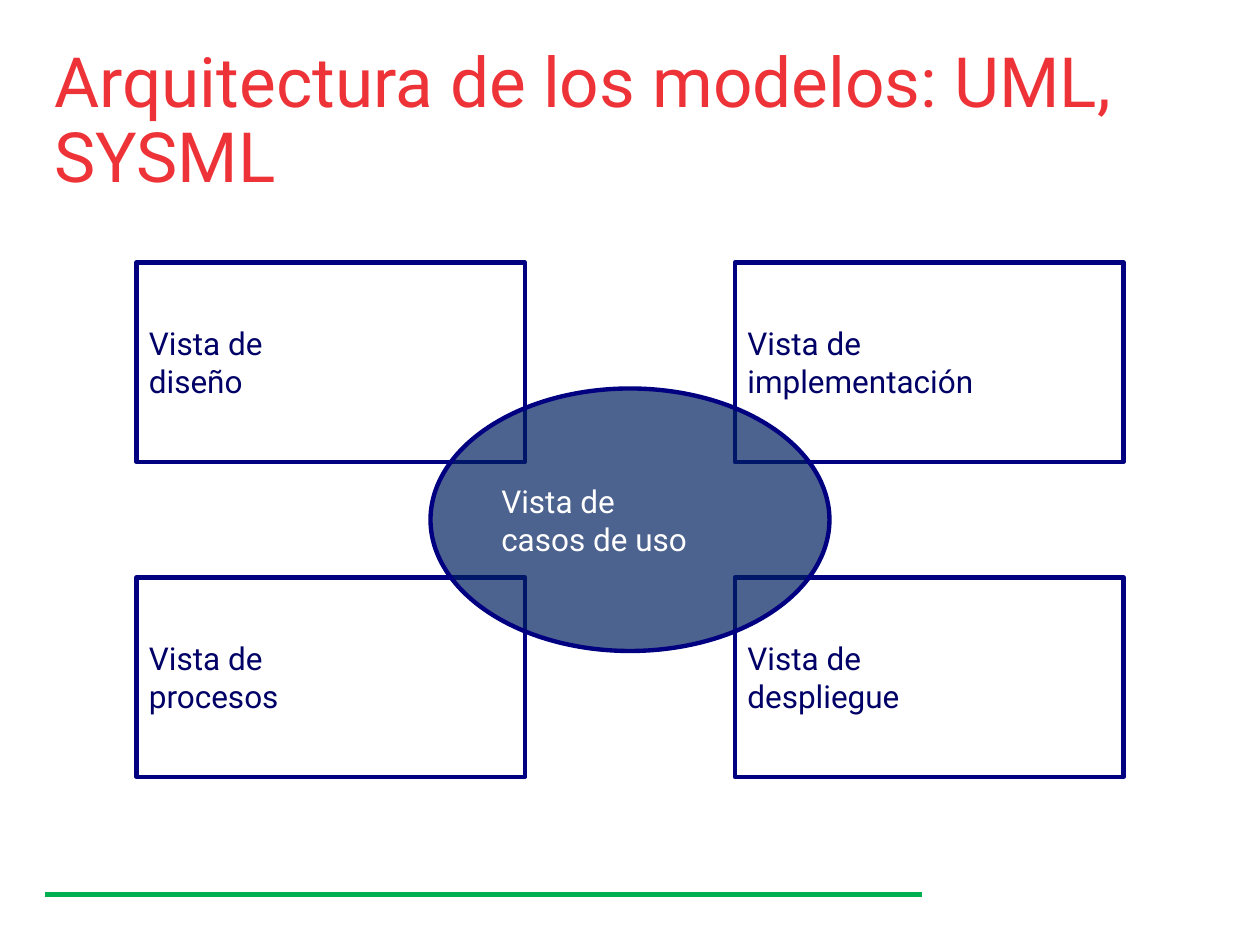
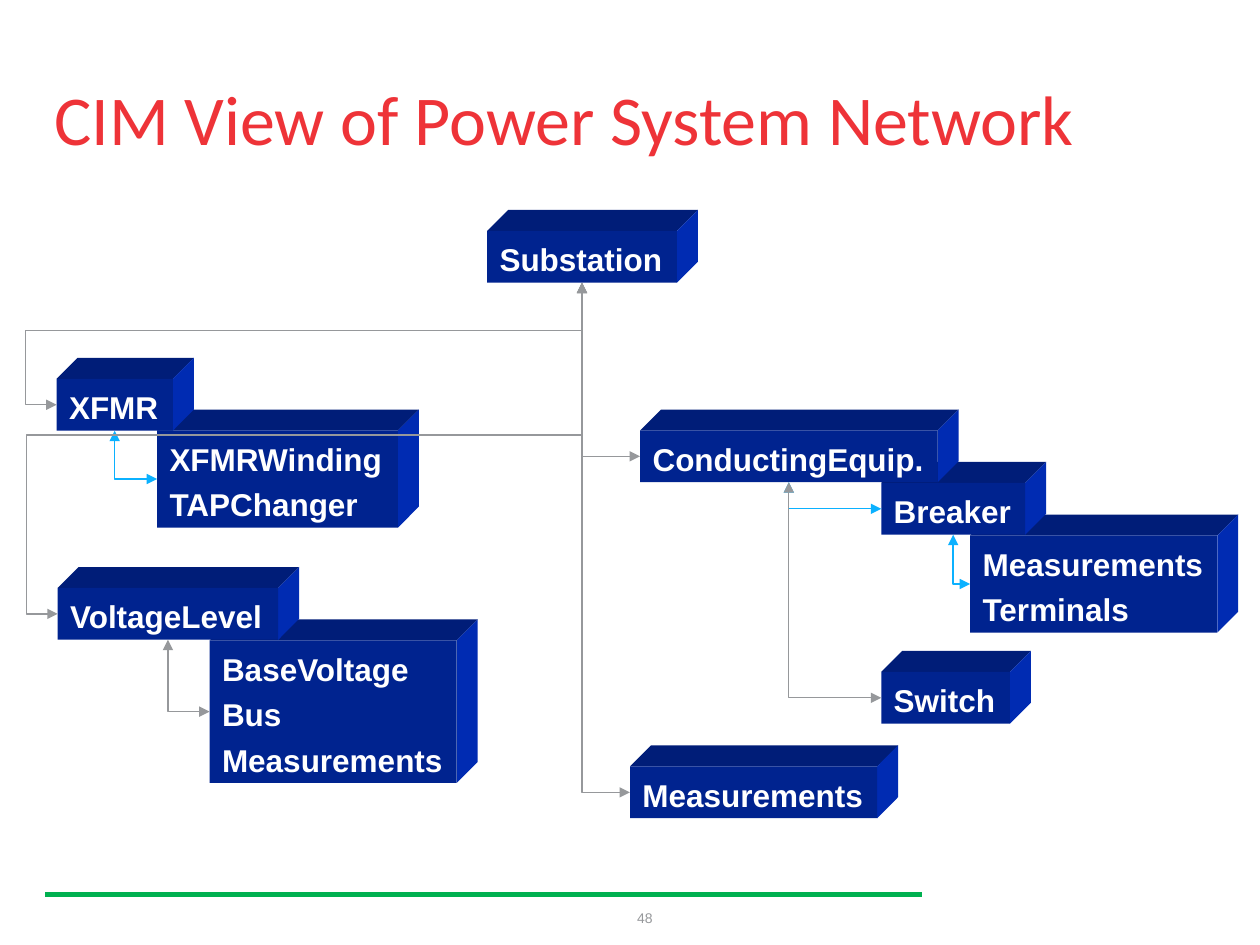
import pptx
import pptx.dml.color
import pptx.enum.shapes
import pptx.enum.text
import pptx.oxml
import pptx.oxml.ns
import pptx.util

Pt = pptx.util.Pt
RGBColor = pptx.dml.color.RGBColor
MSO_SHAPE = pptx.enum.shapes.MSO_SHAPE
MSO_CONNECTOR = pptx.enum.shapes.MSO_CONNECTOR
MSO_ANCHOR = pptx.enum.text.MSO_ANCHOR
PP_ALIGN = pptx.enum.text.PP_ALIGN
qn = pptx.oxml.ns.qn

RED = RGBColor(0xEE, 0x33, 0x38)
GREEN = RGBColor(0x00, 0xB0, 0x50)
GRAY = RGBColor(0x96, 0x98, 0x9B)
SKY = RGBColor(0x0B, 0xB1, 0xFF)
WHITE = RGBColor(0xFF, 0xFF, 0xFF)
NAVY = RGBColor(0x00, 0x00, 0x80)
INK = RGBColor(0x00, 0x00, 0x66)
OVAL = RGBColor(0x00, 0x20, 0x60)
FACE = RGBColor(0x00, 0x23, 0x8F)
TOP = RGBColor(0x00, 0x1D, 0x78)
SIDE = RGBColor(0x00, 0x2B, 0xB2)

DEPTH = 12           # extrusion of a class box
LINE_H = 29.6        # height of a one-line class box
LINE_STEP = 25.9     # extra height for each further line


def add_xml(parent, tag, **attrs):
    """Append a DrawingML element and return it."""
    el = pptx.oxml.parse_xml(f'<a:{tag} {pptx.oxml.ns.nsdecls("a")}/>')
    for name, value in attrs.items():
        el.set(name, str(value))
    parent.append(el)
    return el


def set_text(sp, text, size=18, font="Roboto", color=INK, bold=False,
             align=PP_ALIGN.LEFT, anchor=MSO_ANCHOR.MIDDLE, wrap=False,
             line_spacing=None, space_before=0, top=3.6):
    """Fill a shape with one paragraph for each line of text."""
    tf = sp.text_frame
    tf.word_wrap = wrap
    tf.vertical_anchor = anchor
    tf.margin_top = Pt(top)
    for i, line in enumerate(text.split("\n")):
        p = tf.paragraphs[0] if i == 0 else tf.add_paragraph()
        p.alignment = align
        if line_spacing:
            p.line_spacing = line_spacing
        if i and space_before:
            p.space_before = Pt(space_before)
        r = p.add_run()
        r.text = line
        r.font.size = Pt(size)
        r.font.name = font
        r.font.bold = bold
        r.font.color.rgb = color


def style(sp, fill=None, line=None):
    """Set fill and outline; None means there is none."""
    sp.shadow.inherit = False
    if fill is None:
        sp.fill.background()
    else:
        sp.fill.solid()
        sp.fill.fore_color.rgb = fill
    if line is None:
        sp.line.fill.background()
    else:
        sp.line.color.rgb = line
        sp.line.width = Pt(2.5)


def add_line(slide, kind, x1, y1, x2, y2, color, width):
    cx = slide.shapes.add_connector(kind, Pt(x1), Pt(y1), Pt(x2), Pt(y2))
    cx.line.color.rgb = color
    cx.line.width = Pt(width)
    add_xml(cx._element.spPr, "effectLst")
    return cx


def add_base(prs, title, **title_format):
    """Blank slide with the title and the footer rule."""
    slide = prs.slides.add_slide(prs.slide_layouts[6])
    add_line(slide, MSO_CONNECTOR.STRAIGHT, 26, 511, 527, 511, GREEN, 3)
    sp = slide.shapes.add_textbox(Pt(24), Pt(21), Pt(666), Pt(98))
    set_text(sp, title, color=RED, wrap=True, line_spacing=0.9, **title_format)
    return slide


def add_page_number(slide, number):
    sp = slide.shapes.add_textbox(Pt(218), Pt(510), Pt(162), Pt(28.8))
    set_text(sp, number, size=8, font="Arial", color=GRAY,
             align=PP_ALIGN.RIGHT, wrap=True)


def add_views(slide, x, y, w, h):
    """Four views in the corners, joined by the use case view."""
    view_w, view_h = 222, 114
    views = [["Vista de\ndiseño", "Vista de\nimplementación"],
             ["Vista de\nprocesos", "Vista de\ndespliegue"]]
    for row, names in enumerate(views):
        for col, name in enumerate(names):
            sp = slide.shapes.add_shape(
                MSO_SHAPE.RECTANGLE, Pt(x + col * (w - view_w)),
                Pt(y + row * (h - view_h)), Pt(view_w), Pt(view_h))
            style(sp, line=NAVY)
            set_text(sp, name)

    # Translucent centre
    oval_w, oval_h = 228, 150
    sp = slide.shapes.add_shape(
        MSO_SHAPE.OVAL, Pt(x + (w - oval_w) / 2), Pt(y + (h - oval_h) / 2),
        Pt(oval_w), Pt(oval_h))
    style(sp, fill=OVAL, line=NAVY)
    add_xml(sp._element.spPr.find(qn("a:solidFill"))[0], "alpha", val=70000)
    set_text(sp, "Vista de\ncasos de uso", color=WHITE)


def add_panel(slide, points, color):
    """Closed polygon without outline."""
    pts = [(Pt(px), Pt(py)) for px, py in points]
    fb = slide.shapes.build_freeform(*pts[0])
    fb.add_line_segments(pts[1:], close=True)
    style(fb.convert_to_shape(), fill=color)


def add_class_box(slide, x, y, w, text):
    """Extruded box; returns its front face."""
    h = LINE_H + LINE_STEP * text.count("\n")
    right, bottom, d = x + w, y + h, DEPTH
    add_panel(slide, [(x, y), (x + d, y - d), (right + d, y - d), (right, y)], TOP)
    add_panel(slide, [(right, y), (right + d, y - d), (right + d, bottom - d),
                      (right, bottom)], SIDE)
    sp = slide.shapes.add_shape(MSO_SHAPE.RECTANGLE, Pt(x), Pt(y), Pt(w), Pt(h))
    style(sp, fill=FACE)
    set_text(sp, text, font="Arial", color=WHITE, bold=True,
             anchor=MSO_ANCHOR.TOP, space_before=4.3, top=5.4)
    return sp


def add_link(slide, child, parent, color, adjust=None):
    """Elbow from the left of child to the bottom of parent."""
    cx = add_line(slide, MSO_CONNECTOR.ELBOW, 0, 0, 0, 0, color, 0.75)
    cx.begin_connect(child, 1)
    cx.end_connect(parent, 2)
    geom = cx._element.spPr.find(qn("a:prstGeom"))
    geom.set("prst", "bentConnector4" if adjust else "bentConnector2")
    for i, value in enumerate(adjust or (), 1):
        add_xml(geom.find(qn("a:avLst")), "gd", name=f"adj{i}",
                fmla=f"val {round(value * 100000)}")
    ln = cx.line._get_or_add_ln()
    for end in ("headEnd", "tailEnd"):
        add_xml(ln, end, type="triangle")


def add_network(slide, x, y):
    """Class boxes and their links, from the top left corner."""
    boxes = {  # left, top, width, text
        "switch": (471.6, 252, 73.5, "Switch"),
        "terminals": (522.4, 174, 141.2, "Measurements\nTerminals"),
        "breaker": (471.6, 144, 82.2, "Breaker"),
        "equipment": (333.8, 114, 170, "ConductingEquip."),
        "base": (87.8, 234, 141.2, "BaseVoltage\nBus\nMeasurements"),
        "winding": (57.8, 114, 137.6, "XFMRWinding\nTAPChanger"),
        "substation": (246.4, 0, 108.4, "Substation"),
        "xfmr": (0.4, 84.5, 66.4, "XFMR"),
        "level": (1, 204, 126, "VoltageLevel"),
        "measurements": (328, 306, 141.2, "Measurements"),
    }
    faces = {name: add_class_box(slide, x + left, y + top, w, text)
             for name, (left, top, w, text) in boxes.items()}

    links = [  # child, parent, colour, bends
        ("base", "level", GRAY, None),
        ("winding", "xfmr", SKY, None),
        ("breaker", "equipment", SKY, None),
        ("terminals", "breaker", SKY, None),
        ("level", "substation", GRAY, (-0.06, 0.54)),
        ("xfmr", "substation", GRAY, (-0.06, 0.61)),
        ("measurements", "substation", GRAY, None),
        ("equipment", "substation", GRAY, None),
        ("switch", "equipment", GRAY, None),
    ]
    for child, parent, color, adjust in links:
        add_link(slide, faces[child], faces[parent], color, adjust)


def main():
    prs = pptx.Presentation()
    prs.slide_width, prs.slide_height = Pt(720), Pt(540)

    # Model architecture
    slide = add_base(prs, "Arquitectura de los modelos: UML, SYSML", size=39.6)
    add_views(slide, 78, 150, 564, 294)

    # Power network classes
    slide = add_base(prs, "CIM View of Power System Network",
                     size=40, font="Calibri")
    add_page_number(slide, "48")
    add_network(slide, 32, 132)

    prs.save("out.pptx")


if __name__ == "__main__":
    main()
